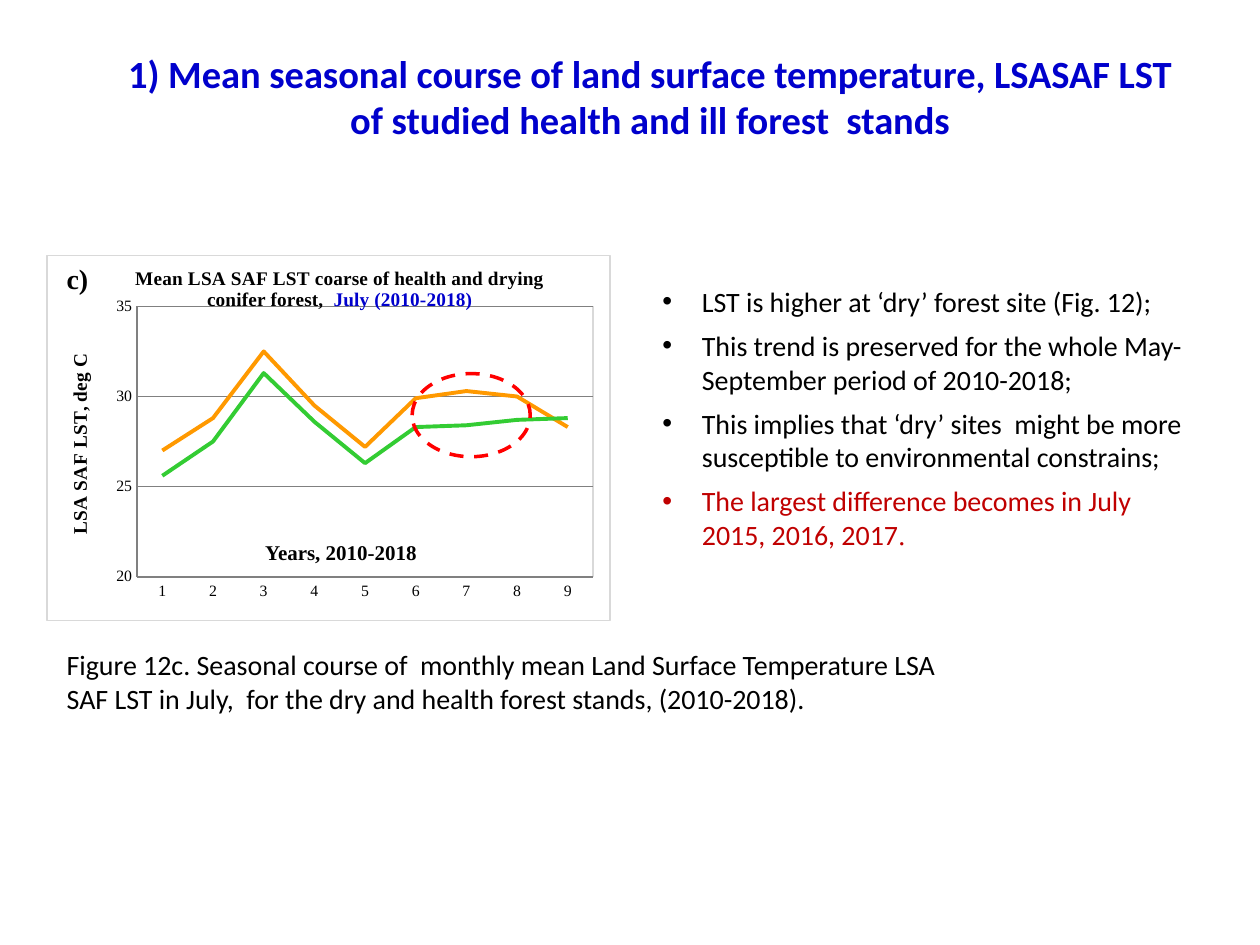
from dataclasses import dataclass

import lxml.etree
import pptx
import pptx.chart.data
import pptx.dml.color
import pptx.enum.chart
import pptx.enum.dml
import pptx.enum.shapes
import pptx.enum.text
import pptx.oxml
import pptx.oxml.ns
import pptx.util

Pt = pptx.util.Pt
RGBColor = pptx.dml.color.RGBColor
qn = pptx.oxml.ns.qn

BLACK = RGBColor(0x00, 0x00, 0x00)
BLUE = RGBColor(0x00, 0x00, 0xCC)
DARK_RED = RGBColor(0xC0, 0x00, 0x00)
RED = RGBColor(0xFF, 0x00, 0x00)
ORANGE = RGBColor(0xFF, 0x99, 0x00)
GREEN = RGBColor(0x33, 0xCC, 0x33)
GREY = RGBColor(0x80, 0x80, 0x80)
PALE_GREY = RGBColor(0xD9, 0xD9, 0xD9)
SANS = "Calibri"
SERIF = "Times New Roman"


@dataclass
class Piece:
    text: str
    size: float = 16
    font: str = SANS
    color: RGBColor = BLACK
    bold: bool = False


@dataclass
class Label:
    left: float
    top: float
    width: float
    height: float
    paragraphs: list[list[Piece]]
    wrap: bool = True
    bulleted: bool = False


@dataclass
class Stand:
    name: str
    temperatures: list[float]
    color: RGBColor


LABELS = [
    Label(371.5, 159, 321, 161.5, [
        [Piece("LST is higher at ‘dry’ forest site (Fig. 12);")],
        [Piece("This trend is preserved for the whole May-September period of 2010-2018;")],
        [Piece("This implies that ‘dry’ sites  might be more susceptible to "
               "environmental constrains;")],
        [Piece("The largest difference becomes in July 2015, 2016, 2017", color=DARK_RED),
         Piece(".", font=SERIF, color=DARK_RED)],
    ], bulleted=True),
    Label(144.5, 304.5, 102, 21.5, [[Piece("Years, 2010-2018", 12, SERIF, bold=True)]], wrap=False),
    Label(31, 146, 27.5, 26.5, [[Piece("c)", 16, SERIF, bold=True)]], wrap=False),
    Label(31, 366.5, 516, 46, [[Piece(
        "Figure 12c. Seasonal course of  monthly mean Land Surface Temperature LSA SAF LST "
        "in July,  for the dry and health forest stands, (2010-2018).")]]),
]

STANDS = [
    Stand("Series 1", [27, 28.8, 32.5, 29.5, 27.2, 29.9, 30.3, 30, 28.3], ORANGE),
    Stand("Series 2", [25.6, 27.5, 31.3, 28.6, 26.3, 28.3, 28.4, 28.7, 28.8], GREEN),
]


def add_piece(paragraph, piece: Piece) -> None:
    run = paragraph.add_run()
    run.text = piece.text
    run.font.size = Pt(piece.size)
    run.font.name = piece.font
    run.font.bold = piece.bold
    run.font.color.rgb = piece.color


def add_bullet(paragraph) -> None:
    properties = paragraph._p.get_or_add_pPr()
    properties.set("marL", str(Pt(22.5)))
    properties.set("indent", str(-Pt(22.5)))
    lxml.etree.SubElement(properties, qn("a:buFont"), typeface="Arial")
    lxml.etree.SubElement(properties, qn("a:buChar"), char="•")
    paragraph.space_after = Pt(6)


def add_label(slide, label: Label) -> None:
    box = slide.shapes.add_textbox(
        Pt(label.left), Pt(label.top), Pt(label.width), Pt(label.height))
    frame = box.text_frame
    frame.word_wrap = label.wrap
    frame.auto_size = pptx.enum.text.MSO_AUTO_SIZE.SHAPE_TO_FIT_TEXT
    for index, pieces in enumerate(label.paragraphs):
        paragraph = frame.add_paragraph() if index else frame.paragraphs[0]
        if label.bulleted:
            add_bullet(paragraph)
        for piece in pieces:
            add_piece(paragraph, piece)


def manual_layout(x: float, y: float, size: tuple[float, float] | None = None):
    """Make a c:layout; a size marks the inner plot area."""
    layout = pptx.oxml.parse_xml(
        '<c:layout xmlns:c="http://schemas.openxmlformats.org/drawingml/2006/chart"/>')
    manual = lxml.etree.SubElement(layout, qn("c:manualLayout"))
    values = {"xMode": "edge", "yMode": "edge", "x": x, "y": y}
    if size:
        values = {"layoutTarget": "inner", **values, "w": size[0], "h": size[1]}
    for tag, value in values.items():
        lxml.etree.SubElement(manual, qn(f"c:{tag}"), val=str(value))
    return layout


def place_title(title, x: float, y: float) -> None:
    element = title._element
    for old in element.findall(qn("c:layout")):
        element.remove(old)
    element.find(qn("c:tx")).addnext(manual_layout(x, y))


def outline():
    """Make a thin pale border without fill for a chart part."""
    return pptx.oxml.parse_xml(
        '<c:spPr xmlns:c="http://schemas.openxmlformats.org/drawingml/2006/chart" '
        'xmlns:a="http://schemas.openxmlformats.org/drawingml/2006/main"><a:noFill/>'
        f'<a:ln w="{Pt(0.75)}"><a:solidFill><a:srgbClr val="{PALE_GREY}"/>'
        '</a:solidFill></a:ln></c:spPr>')


def format_axis(axis) -> None:
    axis.major_tick_mark = pptx.enum.chart.XL_TICK_MARK.NONE
    axis.minor_tick_mark = pptx.enum.chart.XL_TICK_MARK.NONE
    axis.tick_labels.font.size = Pt(9)
    axis.format.line.color.rgb = GREY
    axis.format.line.width = Pt(1)


def add_temperature_chart(slide) -> None:
    data = pptx.chart.data.CategoryChartData()
    data.categories = [str(year) for year in range(1, 10)]
    for stand in STANDS:
        data.add_series(stand.name, stand.temperatures)
    chart = slide.shapes.add_chart(
        pptx.enum.chart.XL_CHART_TYPE.LINE, Pt(26.5), Pt(145.5), Pt(322.5), Pt(209.5), data).chart
    chart.has_legend = False
    chart.font.name = SERIF
    chart.font.size = Pt(10)
    chart.font.color.rgb = BLACK

    chart.has_title = True
    heading = chart.chart_title.text_frame.paragraphs[0]
    add_piece(heading, Piece("Mean LSA SAF LST coarse of health and drying conifer forest,  ",
                             11, SERIF, bold=True))
    add_piece(heading, Piece("July (2010-2018)", 11, SERIF, BLUE, True))
    place_title(chart.chart_title, 0.15, 0.02)

    format_axis(chart.category_axis)
    degrees = chart.value_axis
    format_axis(degrees)
    degrees.minimum_scale, degrees.maximum_scale, degrees.major_unit = 20, 35, 5
    degrees.tick_labels.number_format = "0"
    degrees.tick_labels.number_format_is_linked = False
    degrees.major_gridlines.format.line.color.rgb = GREY
    degrees.major_gridlines.format.line.width = Pt(0.75)
    add_piece(degrees.axis_title.text_frame.paragraphs[0],
              Piece("LSA SAF LST, deg C", 11, SERIF, bold=True))
    place_title(degrees.axis_title, 0.03, 0.26)

    plot = chart.plots[0]
    plot.vary_by_categories = False
    for series, stand in zip(plot.series, STANDS):
        series.smooth = False
        series.marker.style = pptx.enum.chart.XL_MARKER_STYLE.NONE
        series.format.line.color.rgb = stand.color
        series.format.line.width = Pt(2.25)

    chart_part = chart._chartSpace.find(qn("c:chart"))
    chart_part.addnext(outline())
    plot_area = chart_part.find(qn("c:plotArea"))
    for old in plot_area.findall(qn("c:layout")):
        plot_area.remove(old)
    plot_area.insert(0, manual_layout(0.16, 0.14, (0.81, 0.74)))
    plot_area.append(outline())


def add_highlight(slide) -> None:
    ring = slide.shapes.add_shape(
        pptx.enum.shapes.MSO_SHAPE.OVAL, Pt(235.5), Pt(213.5), Pt(67.5), Pt(47.5))
    ring.shadow.inherit = False
    ring.fill.background()
    ring.line.color.rgb = RED
    ring.line.width = Pt(2)
    ring.line.dash_style = pptx.enum.dml.MSO_LINE.DASH


def add_title(slide) -> None:
    title = slide.shapes.title
    title.left, title.top, title.width, title.height = Pt(65.5), Pt(10), Pt(612), Pt(90)
    frame = title.text_frame
    frame.word_wrap = True
    frame.auto_size = pptx.enum.text.MSO_AUTO_SIZE.NONE
    frame.vertical_anchor = pptx.enum.text.MSO_ANCHOR.MIDDLE
    frame.paragraphs[0].alignment = pptx.enum.text.PP_ALIGN.CENTER
    add_piece(frame.paragraphs[0], Piece(
        "1) Mean seasonal course of land surface temperature, LSASAF LST "
        "of studied health and ill forest  stands", 22, SANS, BLUE, True))


def main() -> None:
    deck = pptx.Presentation()
    deck.slide_width, deck.slide_height = Pt(720), Pt(540)
    slide = deck.slides.add_slide(deck.slide_layouts[5])
    add_title(slide)
    add_temperature_chart(slide)
    for label in LABELS:
        add_label(slide, label)
    add_highlight(slide)
    deck.save("out.pptx")


if __name__ == "__main__":
    main()
